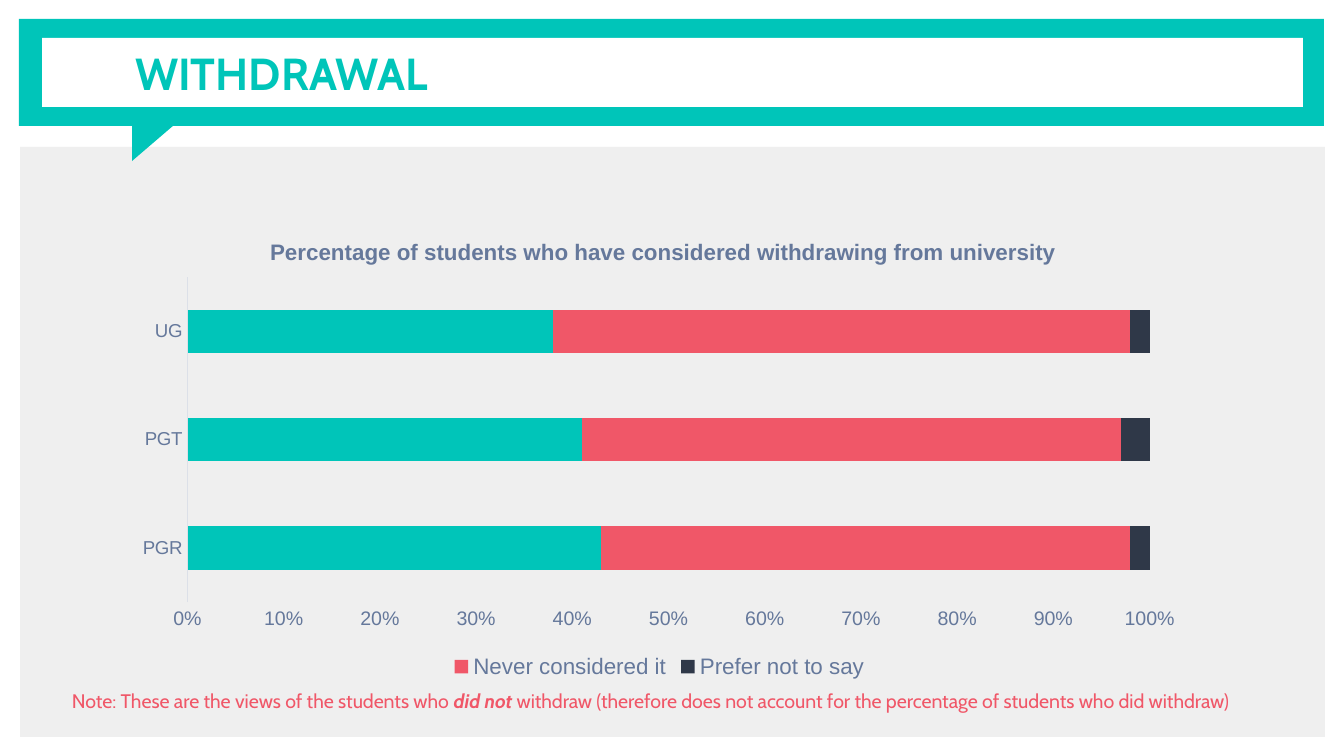
import lxml.etree
import pptx
import pptx.chart.data
import pptx.dml.color
import pptx.enum.chart
import pptx.enum.shapes
import pptx.enum.text
import pptx.oxml.ns
import pptx.util

# Content
TITLE = "WITHDRAWAL"
CHART_TITLE = "Percentage of students who have considered withdrawing from university"
CATEGORIES = ["PGR", "PGT", "UG"]
SERIES = [
    ("Considered withdrawing", (43, 41, 38), "00C5B9"),
    ("Never considered it", (55, 56, 60), "F05768"),
    ("Prefer not to say", (2, 3, 2), "2F3848"),
]
UNLISTED_SERIES = 2
NOTE = [
    ("Note: These are the views of the students who ", {}),
    ("did not ", {"bold": True, "italic": True}),
    ("withdraw (therefore does not account for the percentage of students who did withdraw)", {}),
]

# Formats
TEAL, CORAL, SLATE = "00C5B9", "F05768", "65789B"
TITLE_FONT = {"name": "Cabin", "size": pptx.util.Pt(24), "bold": True}
NOTE_FONT = {"name": "Cabin", "size": pptx.util.Pt(10.5), "bold": False, "italic": False}
CHART_FONT = {"name": "Arial", "bold": False}

# Places in px: left, top, width, height
SLIDE_SIZE = (1344, 756)
TITLE_BOX = (122, 19, 1169, 107)
CHART_BOX = (122, 212, 1075, 472)
NOTE_BOX = (44, 677, 1246, 63)
PLOT_BOX = (188, 277, 962, 325)
CHART_TITLE_CORNER = (266, 234)
TEXT_INSET, NOTE_INDENT = 13, 15
BACKGROUND = [
    ("RECTANGLE", (20, 147, 1305, 590), "EFEFEF", 0),
    ("RECTANGLE", (19, 19, 1305, 107), TEAL, 0),
    ("RIGHT_TRIANGLE", (136, 109, 48, 56), TEAL, 90),
    ("RECTANGLE", (42, 38, 1261, 69), "FFFFFF", 0),
]


def px(length):
    return round(length * 914400 / 134.4)


def box(lengths):
    return [px(length) for length in lengths]


def rgb(value):
    return pptx.dml.color.RGBColor.from_string(value)


def apply(target, values):
    for name, value in values.items():
        setattr(target, name, value)


def format_font(font, values, color):
    apply(font, values)
    font.color.rgb = rgb(color)


def format_frame(frame, anchor):
    margins = {f"margin_{side}": px(TEXT_INSET) for side in ("left", "top", "right", "bottom")}
    apply(frame, {"word_wrap": True, "vertical_anchor": anchor, **margins})


def chart_element(parent, tag, index, **attributes):
    element = lxml.etree.Element(pptx.oxml.ns.qn(tag), attributes)
    parent.insert(index, element)
    return element


def place_in_chart(parent, index, values):
    """Give a chart part a fixed place, as fractions of the chart."""
    for old in parent.findall(pptx.oxml.ns.qn("c:layout")):
        parent.remove(old)
    layout = chart_element(parent, "c:layout", index)
    manual = chart_element(layout, "c:manualLayout", 0)
    for position, (name, value) in enumerate(values.items()):
        chart_element(manual, f"c:{name}", position, val=str(value))


def fractions(corner):
    return {
        "x": round((corner[0] - CHART_BOX[0]) / CHART_BOX[2], 3),
        "y": round((corner[1] - CHART_BOX[1]) / CHART_BOX[3], 3),
    }


def add_background(slide):
    for kind, place, color, rotation in BACKGROUND:
        preset = getattr(pptx.enum.shapes.MSO_SHAPE, kind)
        shape = slide.shapes.add_shape(preset, *box(place))
        shape.rotation = rotation
        shape.shadow.inherit = False
        shape.fill.solid()
        shape.fill.fore_color.rgb = rgb(color)
        shape.line.fill.background()


def add_title(slide):
    title = slide.shapes.title
    apply(title, dict(zip(("left", "top", "width", "height"), box(TITLE_BOX))))
    # Bring the placeholder in front of the background
    slide.shapes._spTree.append(title._element)
    format_frame(title.text_frame, pptx.enum.text.MSO_ANCHOR.MIDDLE)
    paragraph = title.text_frame.paragraphs[0]
    paragraph.alignment = pptx.enum.text.PP_ALIGN.LEFT
    run = paragraph.add_run()
    run.text = TITLE
    format_font(run.font, TITLE_FONT, TEAL)


def add_chart(slide):
    data = pptx.chart.data.CategoryChartData()
    data.categories = CATEGORIES
    for name, values, _ in SERIES:
        data.add_series(name, values)
    kind = pptx.enum.chart.XL_CHART_TYPE.BAR_STACKED_100
    chart = slide.shapes.add_chart(kind, *box(CHART_BOX), data).chart
    format_font(chart.font, {**CHART_FONT, "size": pptx.util.Pt(10)}, "2F3848")

    # Bars
    plot = chart.plots[0]
    apply(plot, {"gap_width": 150, "overlap": 100, "vary_by_categories": False})
    for series, (_, _, color) in zip(plot.series, SERIES):
        series.format.fill.solid()
        series.format.fill.fore_color.rgb = rgb(color)

    # Axes
    none = pptx.enum.chart.XL_TICK_MARK.NONE
    for axis, size in ((chart.category_axis, 10), (chart.value_axis, 10.5)):
        apply(axis, {"major_tick_mark": none, "minor_tick_mark": none, "has_major_gridlines": False})
        format_font(axis.tick_labels.font, {**CHART_FONT, "size": pptx.util.Pt(size)}, SLATE)
    line = chart.category_axis.format.line
    line.width = pptx.util.Pt(0.75)
    line.color.rgb = rgb("DCE0E8")
    chart.value_axis.format.line.fill.background()
    chart.value_axis.major_unit = 0.1
    apply(chart.value_axis.tick_labels, {"number_format": "0%", "number_format_is_linked": False})

    # Legend without the last series
    chart.has_legend = True
    legend = chart.legend
    apply(legend, {"position": pptx.enum.chart.XL_LEGEND_POSITION.BOTTOM, "include_in_layout": False})
    format_font(legend.font, {**CHART_FONT, "size": pptx.util.Pt(12)}, SLATE)
    entry = chart_element(legend._element, "c:legendEntry", 1)
    chart_element(entry, "c:idx", 0, val=str(UNLISTED_SERIES))
    chart_element(entry, "c:delete", 1, val="1")

    # Chart title and fixed places
    chart.has_title = True
    run = chart.chart_title.text_frame.paragraphs[0].add_run()
    run.text = CHART_TITLE
    format_font(run.font, {**CHART_FONT, "size": pptx.util.Pt(12), "bold": True}, SLATE)
    edges = {"xMode": "edge", "yMode": "edge"}
    place_in_chart(chart.chart_title._element, 1, {**edges, **fractions(CHART_TITLE_CORNER)})
    size = {"w": round(PLOT_BOX[2] / CHART_BOX[2], 3), "h": round(PLOT_BOX[3] / CHART_BOX[3], 3)}
    plot_area = chart._chartSpace.chart.plotArea
    place_in_chart(plot_area, 0, {"layoutTarget": "inner", **edges, **fractions(PLOT_BOX), **size})


def add_note(slide):
    frame = slide.shapes.add_textbox(*box(NOTE_BOX)).text_frame
    format_frame(frame, pptx.enum.text.MSO_ANCHOR.TOP)
    paragraph = frame.paragraphs[0]
    paragraph.space_before = pptx.util.Pt(6)
    paragraph._p.get_or_add_pPr().set("marL", str(px(NOTE_INDENT)))
    for text, emphasis in NOTE:
        run = paragraph.add_run()
        run.text = text
        format_font(run.font, {**NOTE_FONT, **emphasis}, CORAL)


def main():
    presentation = pptx.Presentation()
    presentation.slide_width, presentation.slide_height = box(SLIDE_SIZE)
    title_only = presentation.slide_layouts[5]
    slide = presentation.slides.add_slide(title_only)
    add_background(slide)
    add_title(slide)
    add_chart(slide)
    add_note(slide)
    presentation.save("out.pptx")


if __name__ == "__main__":
    main()
